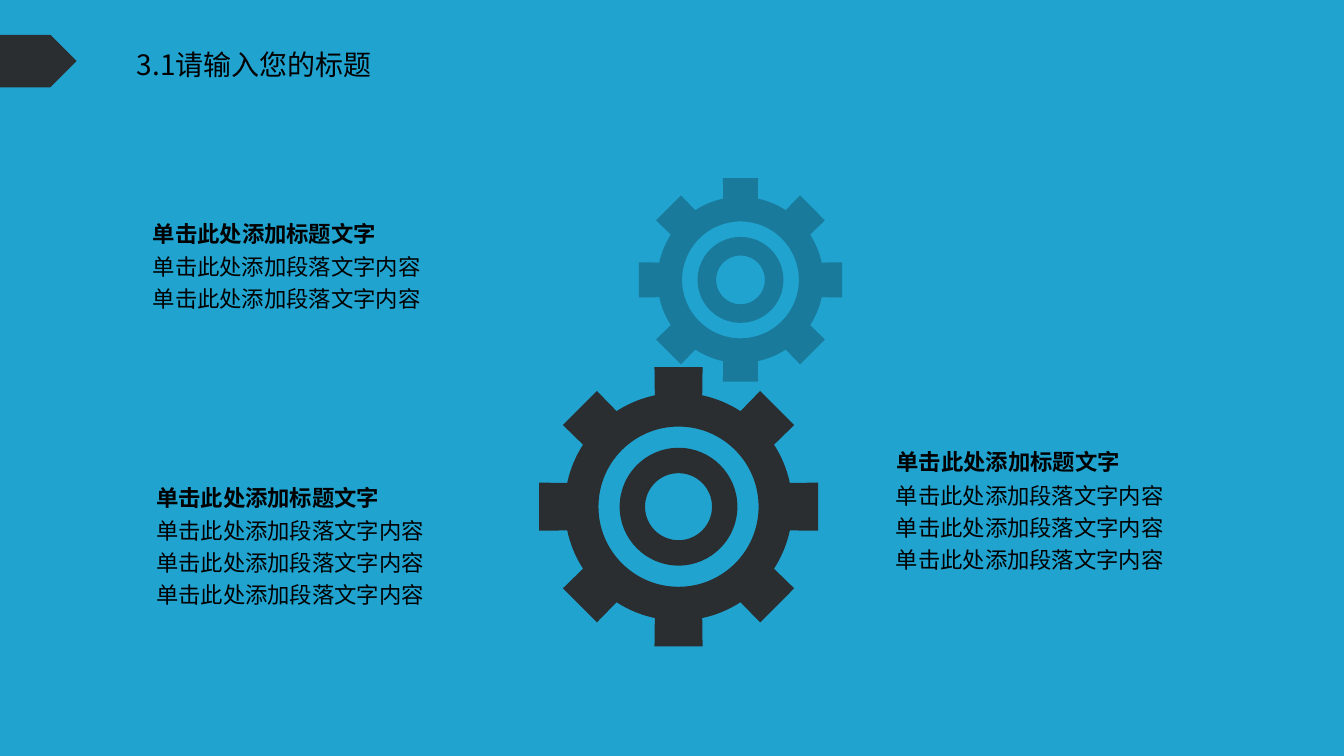
from math import asin, cos, pi, sin, tan

from lxml import etree
from pptx import Presentation
from pptx.dml.color import RGBColor as Color
from pptx.enum.shapes import MSO_SHAPE as Shape
from pptx.enum.text import MSO_AUTO_SIZE as AutoSize, PP_ALIGN as Align
from pptx.oxml.ns import qn
from pptx.util import Inches, Pt

COLORS = {"sky": "21A3D0", "teal": "197A9C", "charcoal": "2B2E30", "text": "000000"}
FONT = "Noto Sans CJK SC"
WIDTH, HEIGHT = Inches(13.34), Inches(7.5)
# The grid has 100 columns and 100 rows
COLUMN, ROW = WIDTH / 100, HEIGHT / 100
HEADING = "单击此处添加标题文字"
BODY_LINE = "单击此处添加段落文字内容"


def place(left, top, width, height):
    return [round(size) for size in (left * COLUMN, top * ROW, width * COLUMN, height * ROW)]


def paint(shape, color):
    shape.shadow.inherit = False
    shape.fill.solid()
    shape.fill.fore_color.rgb = Color.from_string(COLORS[color])
    shape.line.fill.background()


def add_text(page, box, lines, size, bold=False, wrap=True, align=Align.LEFT,
             spacing=None, insets=(0.08, 0.04)):
    frame = page.shapes.add_textbox(*place(*box)).text_frame
    frame.word_wrap = wrap
    frame.auto_size = AutoSize.SHAPE_TO_FIT_TEXT
    frame.margin_left = frame.margin_right = Inches(insets[0])
    frame.margin_top = frame.margin_bottom = Inches(insets[1])
    for index, line in enumerate(lines):
        para = frame.paragraphs[0] if index == 0 else frame.add_paragraph()
        para.text = line
        para.alignment = align
        para.line_spacing = spacing
        font = para.font
        font.size, font.bold, font.name = Pt(size), bold, FONT
        font.color.rgb = Color.from_string(COLORS["text"])
        # East Asian typeface next to the Latin one
        latin = para._p.find(".//" + qn("a:latin"))
        latin.addnext(etree.Element(qn("a:ea"), typeface=FONT))


def add_header(page, left, top):
    """Section title behind an arrow tab and a chevron."""
    add_text(page, (left + 9.45, top + 1.06, 19.19, 5.87), ["3.1请输入您的标题"], 20,
             insets=(0.1, 0.05))
    for kind, offset, width, color in ((Shape.PENTAGON, 0, 5.7, "charcoal"),
                                       (Shape.CHEVRON, 4.65, 3.52, "sky")):
        arrow = page.shapes.add_shape(kind, *place(left + offset, top, width, 6.93))
        arrow.adjustments[0] = 0.5
        paint(arrow, color)


def add_text_block(page, left, top, width, line_count, align=Align.LEFT):
    """Bold heading above a few body lines."""
    add_text(page, (left, top + 3.67, width, 4.27 * line_count + 1.2),
             [BODY_LINE] * line_count, 16, align=align, spacing=1.2)
    add_text(page, (left, top, 18.1, 4.67), [HEADING], 16, bold=True, wrap=False, align=align)


def polar(radius, angle):
    return radius * sin(angle), -radius * cos(angle)


def curve(radius, start, end):
    """Two control points and the end point of a Bézier arc."""
    handle = radius * 4 / 3 * tan((end - start) / 4)
    (x1, y1), (x2, y2) = polar(radius, start), polar(radius, end)
    return [(x1 + handle * cos(start), y1 + handle * sin(start)),
            (x2 - handle * cos(end), y2 - handle * sin(end)), (x2, y2)]


def gear_contours(teeth=8, tooth=0.17, body=0.816, rings=(0.574, 0.422, 0.24)):
    """Segments of a gear of radius 1: one point is a line, three are a curve."""
    half_base, half_tip = asin(tooth / body), asin(tooth)
    tip = 1 / cos(half_tip)
    pitch = 2 * pi / teeth
    outline = [[polar(body, -half_base)]]
    for turn in (pitch * index for index in range(teeth)):
        outline += [[polar(tip, turn - half_tip)], [polar(tip, turn + half_tip)],
                    [polar(body, turn + half_base)],
                    curve(body, turn + half_base, turn + pitch - half_base)]
    quarters = [pi / 2 * index for index in range(4)]
    return [outline] + [[[polar(radius, 0)]] + [curve(radius, start, start + pi / 2)
                                                for start in quarters] for radius in rings]


def add_gear(page, center_x, center_y, radius, color):
    x, y, reach, _ = place(center_x, center_y, radius, 0)
    contours = [[[(x + reach * across, y + reach * down) for across, down in segment]
                 for segment in contour] for contour in gear_contours()]
    builder = page.shapes.build_freeform(*contours[0][0][0])
    for index, (start, *segments) in enumerate(contours):
        if index:
            builder.move_to(*start[0])
        builder.add_line_segments([point for segment in segments for point in segment], close=True)
    gear = builder.convert_to_shape()
    # Join the three points of each arc into one curve
    lines = gear._element.iter(qn("a:lnTo"))
    steps = iter(list(lines))
    for segment in (segment for contour in contours for segment in contour[1:]):
        first, *others = [next(steps) for _ in segment]
        if others:
            first.tag = qn("a:cubicBezTo")
            for other in others:
                first.append(other[0])
                other.getparent().remove(other)
    paint(gear, color)


def main():
    deck = Presentation()
    deck.slide_width, deck.slide_height = WIDTH, HEIGHT
    page = deck.slides.add_slide(deck.slide_layouts[6])
    page.background.fill.solid()
    page.background.fill.fore_color.rgb = Color.from_string(COLORS["sky"])

    # Text around the gears
    add_text_block(page, 11.02, 63.47, 22.71, 3)
    add_text_block(page, 10.77, 28.53, 22.49, 2)
    add_text_block(page, 65.83, 58.8, 21.36, 3, Align.RIGHT)

    # Interlocking gears
    add_gear(page, 55.1, 37.03, 7.57, "teal")
    add_gear(page, 50.49, 67.03, 10.38, "charcoal")
    add_gear(page, 41.3, 42.4, 6.82, "sky")

    add_header(page, 0, 4.62)
    deck.save("out.pptx")


if __name__ == "__main__":
    main()
